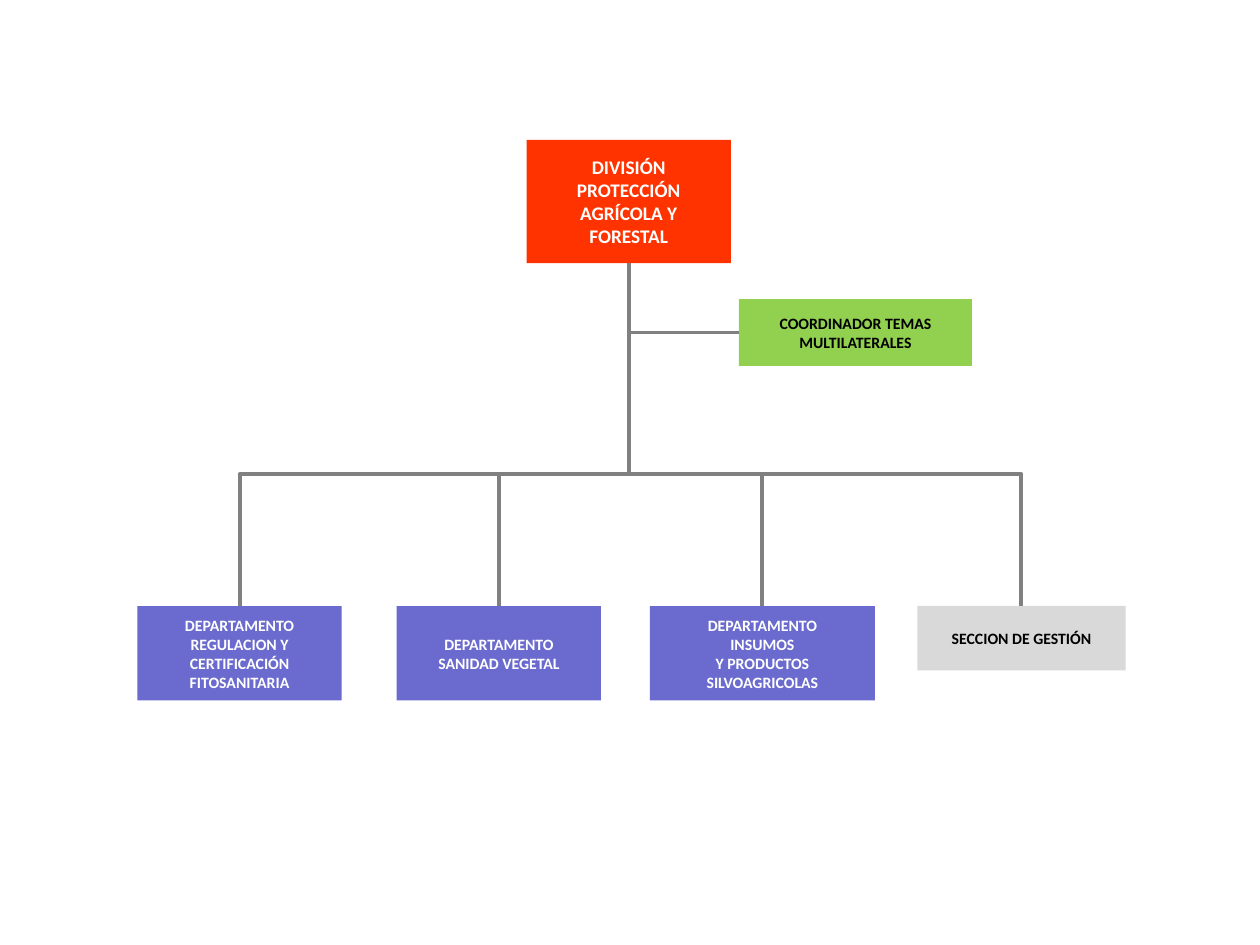
from lxml import etree
from pptx import Presentation
from pptx.dml.color import RGBColor
from pptx.enum.shapes import MSO_CONNECTOR, MSO_SHAPE
from pptx.enum.text import MSO_ANCHOR, PP_ALIGN
from pptx.oxml.ns import qn
from pptx.util import Pt

RECTANGLE = MSO_SHAPE.RECTANGLE
ELBOW = MSO_CONNECTOR.ELBOW
MIDDLE = MSO_ANCHOR.MIDDLE
CENTER = PP_ALIGN.CENTER
TOP, LEFT, BOTTOM = 0, 1, 2

COLORS = {
    "division": "FF3300",
    "department": "6B6BCF",
    "coordinator": "92D050",
    "section": "D9D9D9",
    "line": "808080",
    "light": "FFFFFF",
    "dark": "000000",
}
FONT = "Calibri"
BUS_POSITION = 0.615  # share of the drop at which the branches turn sideways

# left, width, height, fill, font colour, text
UNITS = [
    (0, 116.8, 54, "department", "light",
     "DEPARTAMENTO REGULACION Y\nCERTIFICACIÓN FITOSANITARIA"),
    (148.2, 116.8, 54, "department", "light",
     "DEPARTAMENTO\nSANIDAD VEGETAL"),
    (292.8, 128.6, 54, "department", "light",
     "DEPARTAMENTO\nINSUMOS\nY PRODUCTOS SILVOAGRICOLAS"),
    (445.7, 119, 36.8, "section", "dark", "SECCION DE GESTIÓN"),
]


def add_unit(slide, box, fill, font_color, text, size=9):
    """Add one organisational unit: a filled rectangle with bold centred text."""
    shape = slide.shapes.add_shape(RECTANGLE, *(Pt(value) for value in box))
    shape.shadow.inherit = False
    shape.fill.solid()
    shape.fill.fore_color.rgb = RGBColor.from_string(COLORS[fill])
    shape.line.fill.background()
    text_frame = shape.text_frame
    text_frame.word_wrap = True
    text_frame.vertical_anchor = MIDDLE
    text_frame.text = text
    for paragraph in text_frame.paragraphs:
        paragraph.alignment = CENTER
        for run in paragraph.runs:
            run.font.name = FONT
            run.font.size = Pt(size)
            run.font.bold = True
            run.font.color.rgb = RGBColor.from_string(COLORS[font_color])
    return shape


def add_branch(slide, parent, child, side):
    """Join the parent's bottom to the child's top or left, going down first."""
    connector = slide.shapes.add_connector(ELBOW, 0, 0, 0, 0)
    connector.begin_connect(parent, BOTTOM)
    connector.end_connect(child, side)
    connector.line.color.rgb = RGBColor.from_string(COLORS["line"])
    connector.line.width = Pt(2.25)

    start_x, start_y = connector.begin_x, connector.begin_y
    end_x, end_y = connector.end_x, connector.end_y
    drop, reach = end_y - start_y, abs(end_x - start_x)
    goes_right = end_x > start_x

    # A quarter turn makes the elbow leave downwards instead of sideways.
    connector.left = (start_x + end_x - drop) // 2
    connector.top = (start_y + end_y - reach) // 2
    connector.width, connector.height = drop, reach
    properties = connector._element.spPr
    transform = properties.find(qn("a:xfrm"))
    for flip in ("flipH", "flipV"):
        transform.attrib.pop(flip, None)
    transform.set("rot", str((270 if goes_right else 90) * 60000))
    if goes_right:
        transform.set("flipH", "1")

    geometry = properties.find(qn("a:prstGeom"))
    if side == LEFT:
        geometry.set("prst", "bentConnector2")
    else:
        adjustments = geometry.find(qn("a:avLst"))
        etree.SubElement(adjustments, qn("a:gd"), name="adj1",
                         fmla=f"val {round(BUS_POSITION * 100000)}")
    etree.SubElement(properties, qn("a:effectLst"))


def add_organisation_chart(slide, left, top):
    division = add_unit(slide, (left + 222.4, top, 116.8, 70.5), "division",
                        "light", "DIVISIÓN PROTECCIÓN AGRÍCOLA Y FORESTAL", 11)
    coordinator = add_unit(slide, (left + 343.7, top + 91, 133.2, 38.2),
                           "coordinator", "dark",
                           "COORDINADOR TEMAS MULTILATERALES")
    add_branch(slide, division, coordinator, LEFT)
    for offset, width, height, fill, font_color, text in UNITS:
        unit = add_unit(slide, (left + offset, top + 266.4, width, height),
                        fill, font_color, text)
        add_branch(slide, division, unit, TOP)


def main():
    presentation = Presentation()
    presentation.slide_width = Pt(720)
    presentation.slide_height = Pt(540)
    slide = presentation.slides.add_slide(presentation.slide_layouts[6])
    add_organisation_chart(slide, 78.5, 79.9)
    presentation.save("out.pptx")


if __name__ == "__main__":
    main()
